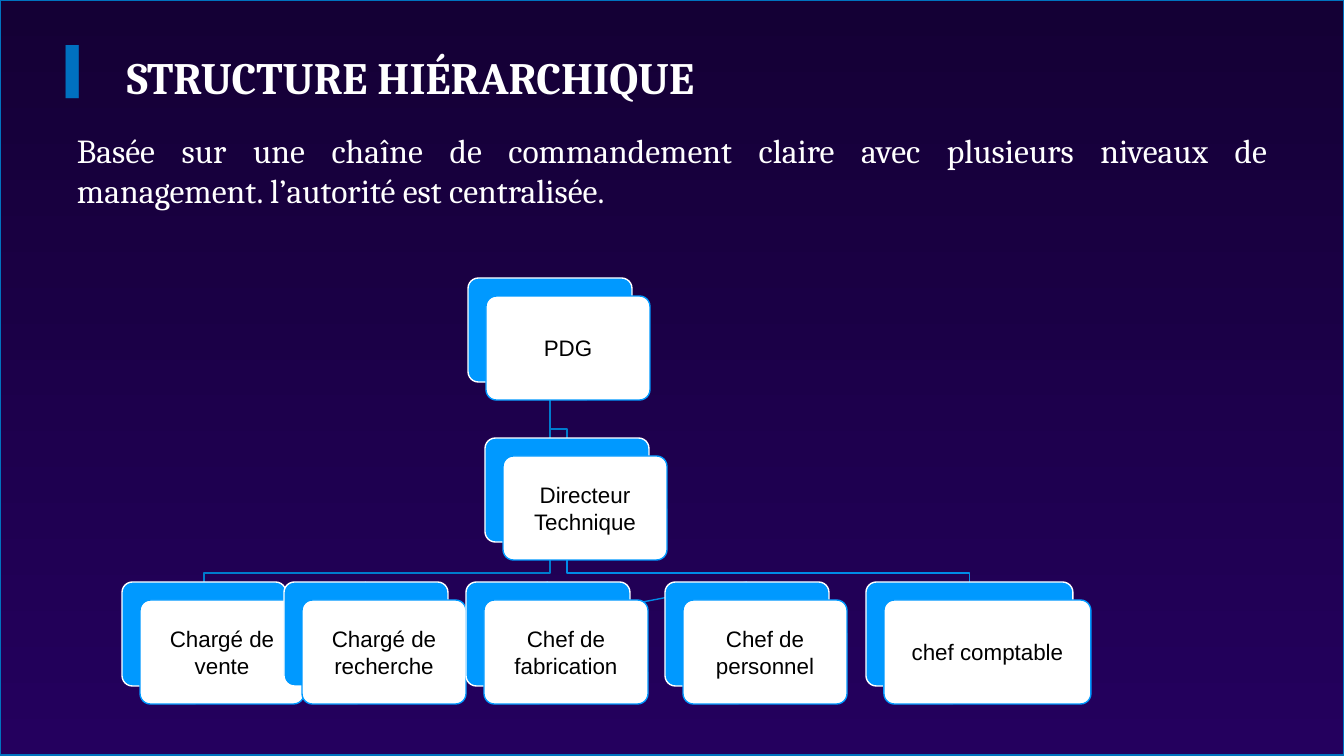
"""Build the slide on hierarchical structure with its organisation chart."""
import pptx
import pptx.util
import pptx.dml.color
import pptx.enum.shapes
import pptx.enum.text
import pptx.oxml.ns
from lxml import etree

TITLE = "STRUCTURE HIÉRARCHIQUE"
INTRO = ("Basée sur une chaîne de commandement claire avec plusieurs niveaux "
         "de management. l’autorité est centralisée.")
CARDS = [
    ("PDG", 468, 278, 164),
    ("Directeur Technique", 485, 438, 164),
    ("Chargé de vente", 122, 582, 164),
    ("Chargé de recherche", 284, 582, 164),
    ("Chef de fabrication", 466, 582, 164),
    ("Chef de personnel", 665, 582, 164),
    ("chef comptable", 866, 582, 207),
]
ELBOWS = [
    ("PDG", "Chargé de vente", "branch"),
    ("PDG", "Directeur Technique", "branch"),
    ("Directeur Technique", "chef comptable", "leaf"),
]
SALES = "Chargé de vente"
SALES_LINKS = ["Chargé de recherche", "Chef de fabrication", "Chef de personnel"]
COLORS = {"top": "140035", "bottom": "24005E", "frame": "0073BF",
          "white": "FFFFFF", "black": "000000", "marker": "0070C0",
          "card": "0099FF", "branch": "007BCC", "leaf": "008BE7"}
CARD_HEIGHT, CARD_OFFSET, ELBOW_DROP = 104, 18, 9
TITLE_INDENT = 60
PX = 914400 / 100.8
ALIGN = pptx.enum.text.PP_ALIGN
SHAPE = pptx.enum.shapes.MSO_SHAPE


def px(length):
    return pptx.util.Emu(round(length * PX))


def color(key):
    return pptx.dml.color.RGBColor.from_string(COLORS[key])


def set_line(shape, key):
    shape.line.color.rgb = color(key)
    shape.line.width = pptx.util.Pt(1)


def write(shape, text, font, size, ink, align, anchor, inset=0, bold=False):
    frame = shape.text_frame
    frame.word_wrap = True
    frame.auto_size = pptx.enum.text.MSO_AUTO_SIZE.NONE
    frame.vertical_anchor = anchor
    frame.margin_left = frame.margin_right = px(inset)
    frame.margin_top = frame.margin_bottom = px(inset)
    paragraph = frame.paragraphs[0]
    paragraph.text = text
    paragraph.alignment = align
    paragraph.font.name = font
    paragraph.font.size = pptx.util.Pt(size)
    paragraph.font.bold = bold
    paragraph.font.color.rgb = color(ink)


def add_card(slide, left, top, width, fill, line):
    card = slide.shapes.add_shape(SHAPE.ROUNDED_RECTANGLE, px(left), px(top),
                                  px(width), px(CARD_HEIGHT))
    card.adjustments[0] = 0.1
    card.shadow.inherit = False
    card.fill.solid()
    card.fill.fore_color.rgb = color(fill)
    set_line(card, line)
    return card


def add_backdrop(slide, width, height):
    backdrop = slide.shapes.add_shape(SHAPE.RECTANGLE, 0, 0, width, height)
    backdrop.shadow.inherit = False
    backdrop.fill.gradient()
    backdrop.fill.gradient_angle = 270
    for stop, key in zip(backdrop.fill.gradient_stops, ("top", "bottom")):
        stop.color.rgb = color(key)
    set_line(backdrop, "frame")
    slide.shapes._spTree.insert(2, backdrop._element)


def add_title(slide):
    title = slide.shapes.title
    title.left, title.top, title.width, title.height = map(px, (67, 14, 1210, 126))
    properties = title.text_frame.paragraphs[0]._p.get_or_add_pPr()
    properties.set("marL", str(px(TITLE_INDENT)))
    properties.set("indent", str(-px(TITLE_INDENT)))
    qn = pptx.oxml.ns.qn
    marker_color = etree.SubElement(properties, qn("a:buClr"))
    etree.SubElement(marker_color, qn("a:srgbClr"), val=COLORS["marker"])
    etree.SubElement(properties, qn("a:buChar"), char="▍")
    write(title, TITLE, "Cambria", 32, "white", ALIGN.LEFT,
          pptx.enum.text.MSO_ANCHOR.MIDDLE, bold=True)


def add_elbow(slide, start, end, key):
    (x1, y1), (x2, y2) = start, end
    bend = y2 - ELBOW_DROP
    builder = slide.shapes.build_freeform(px(x1), px(y1))
    builder.add_line_segments([(px(x1), px(bend)), (px(x2), px(bend)),
                               (px(x2), px(y2))], close=False)
    elbow = builder.convert_to_shape()
    elbow.fill.background()
    elbow.shadow.inherit = False
    set_line(elbow, key)


def add_chart(slide):
    tops = {name: (left + width / 2, top) for name, left, top, width in CARDS}
    bottoms = {name: (x, y + CARD_HEIGHT) for name, (x, y) in tops.items()}
    for parent, child, key in ELBOWS:
        add_elbow(slide, bottoms[parent], tops[child], key)
    links = {}
    for name in SALES_LINKS:
        link = slide.shapes.add_connector(
            pptx.enum.shapes.MSO_CONNECTOR.STRAIGHT,
            *map(px, bottoms[SALES] + tops[name]))
        set_line(link, "leaf")
        etree.SubElement(link._element.spPr, pptx.oxml.ns.qn("a:effectLst"))
        links[name] = link
    backs = {}
    for name, left, top, width in CARDS:
        backs[name] = add_card(slide, left, top, width, "card", "white")
        front = add_card(slide, left + CARD_OFFSET, top + CARD_OFFSET, width,
                         "white", "card")
        write(front, name, "Arial", 16, "black", ALIGN.CENTER,
              pptx.enum.text.MSO_ANCHOR.MIDDLE, inset=7)
    for name, link in links.items():
        link.begin_connect(backs[SALES], 2)
        link.end_connect(backs[name], 0)


def main():
    deck = pptx.Presentation()
    deck.slide_width, deck.slide_height = px(1344), px(756)
    slide = deck.slides.add_slide(deck.slide_layouts[5])
    add_backdrop(slide, deck.slide_width, px(755))
    add_title(slide)
    intro = slide.shapes.add_textbox(px(77), px(130), px(1190), px(90))
    write(intro, INTRO, "Cambria", 24, "white", ALIGN.JUSTIFY,
          pptx.enum.text.MSO_ANCHOR.TOP)
    add_chart(slide)
    deck.save("out.pptx")


if __name__ == "__main__":
    main()
